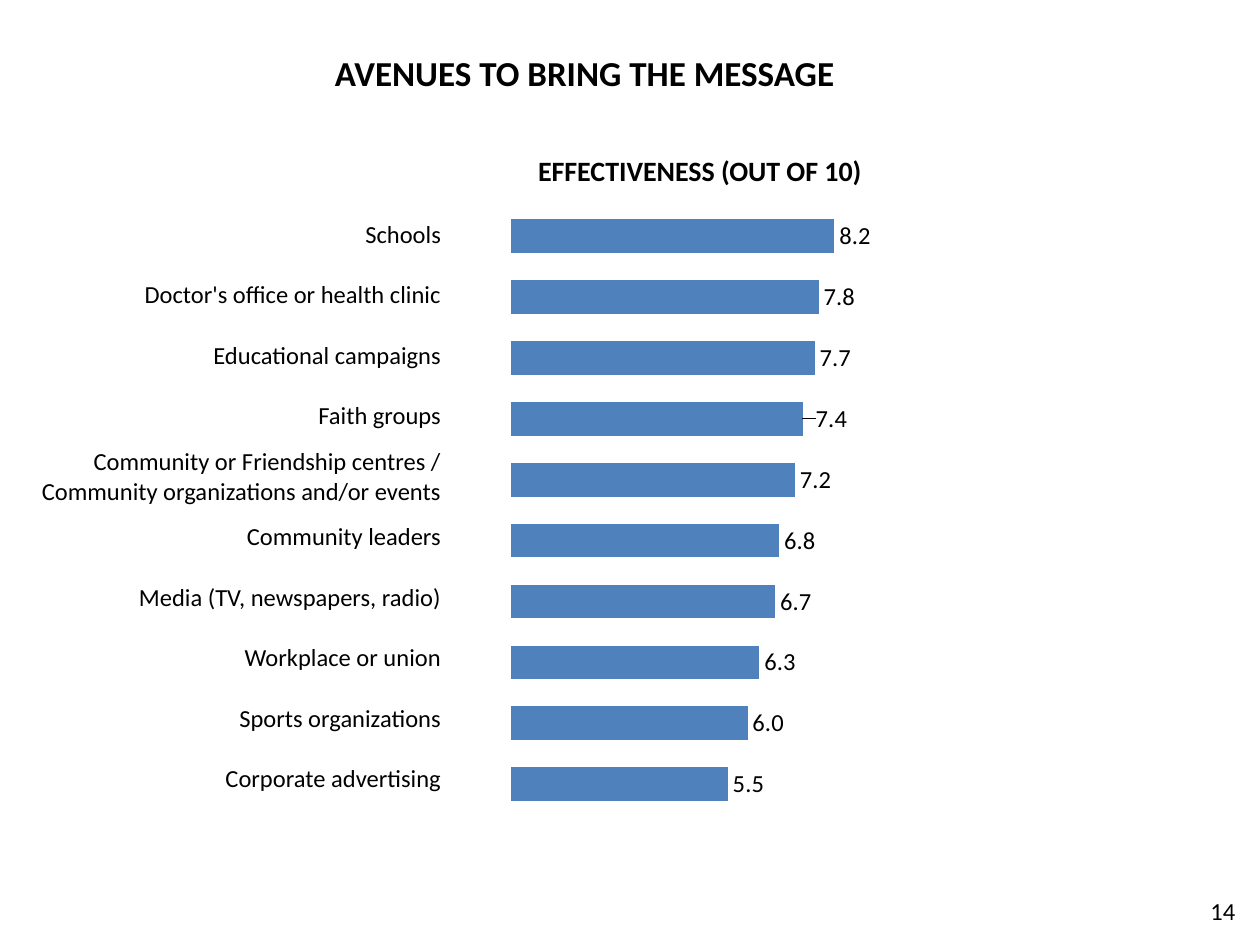
from lxml.etree import SubElement
from pptx import Presentation
from pptx.chart.data import CategoryChartData
from pptx.dml.color import RGBColor
from pptx.enum.chart import XL_CHART_TYPE, XL_LABEL_POSITION
from pptx.enum.text import MSO_ANCHOR, PP_ALIGN
from pptx.oxml.ns import qn
from pptx.util import Inches, Pt

BLACK = RGBColor(0x00, 0x00, 0x00)
BLUE = RGBColor(0x4F, 0x81, 0xBD)
FONT = "Calibri"
ROW_HEIGHT = 0.48
AVENUES = [
    ("Schools", 8.2),
    ("Doctor's office or health clinic", 7.8),
    ("Educational campaigns", 7.7),
    ("Faith groups", 7.4),
    ("Community or Friendship centres / Community organizations and/or events", 7.2),
    ("Community leaders", 6.8),
    ("Media (TV, newspapers, radio)", 6.7),
    ("Workplace or union", 6.3),
    ("Sports organizations", 6.0),
    ("Corporate advertising", 5.5),
]


def format_font(font, size, bold=False):
    """Apply the slide's typeface and colour to a font."""
    for name, value in {"name": FONT, "size": Pt(size), "bold": bold}.items():
        setattr(font, name, value)
    font.color.rgb = BLACK


def add_text(slide, text, box, size, bold=False, align=PP_ALIGN.LEFT):
    """Add a one-paragraph text box."""
    shape = slide.shapes.add_textbox(*map(Inches, box))
    shape.text_frame.word_wrap = True
    paragraph = shape.text_frame.paragraphs[0]
    paragraph.text = text
    paragraph.alignment = align
    format_font(paragraph.runs[0].font, size, bold)


def set_layout(parent, position, values):
    """Place a manual layout at the given child position of a chart element."""
    for old in parent.findall(qn("c:layout")):
        parent.remove(old)
    layout = SubElement(parent, qn("c:layout"))
    manual = SubElement(layout, qn("c:manualLayout"))
    for tag, value in values.items():
        SubElement(manual, qn(f"c:{tag}")).set("val", str(value))
    parent.insert(position, layout)


def format_labels(plot):
    """Show values beside the bars and nudge the faith groups label."""
    plot.has_data_labels = True
    labels = plot.data_labels
    settings = {
        "show_value": True,
        "number_format": "#,##0.0",
        "number_format_is_linked": False,
        "position": XL_LABEL_POSITION.OUTSIDE_END,
    }
    for name, value in settings.items():
        setattr(labels, name, value)
    format_font(labels.font, 14)
    series = plot.series[0]
    faith_index = [value for _, value in reversed(AVENUES)].index(7.4)
    label = series.points[faith_index].data_label
    label.position = XL_LABEL_POSITION.OUTSIDE_END
    format_font(label.font, 14)
    series_labels = series.data_labels
    for name, value in settings.items():
        setattr(series_labels, name, value)
    format_font(series_labels.font, 14)
    point_label = series_labels._element.find(qn("c:dLbl"))
    set_layout(point_label, 1, {"x": 0.015, "y": 0})


def add_bar_chart(slide, box):
    """Add the effectiveness bars, lowest value at the bottom."""
    data = CategoryChartData(number_format="0.0")
    data.categories = [str(number + 1) for number in range(len(AVENUES))]
    data.add_series("Series 1", [value for _, value in reversed(AVENUES)])
    frame = slide.shapes.add_chart(
        XL_CHART_TYPE.BAR_CLUSTERED, *map(Inches, box), data
    )
    chart = frame.chart
    chart.has_legend = False
    chart.has_title = False
    format_font(chart.font, 18)
    chart.value_axis.minimum_scale = 0
    chart.value_axis.maximum_scale = 12
    chart.value_axis.has_major_gridlines = False
    for axis in (chart.category_axis, chart.value_axis):
        axis.visible = False
    plot = chart.plots[0]
    plot.gap_width = 81
    plot.vary_by_categories = False
    fill = plot.series[0].format.fill
    fill.solid()
    fill.fore_color.rgb = BLUE
    format_labels(plot)
    plot_area = chart._chartSpace.chart.plotArea
    set_layout(plot_area, 0, {
        "layoutTarget": "inner", "xMode": "edge", "yMode": "edge",
        "x": 0.055, "y": 0.017, "w": 0.889, "h": 0.877,
    })


def add_avenue_table(slide, left, top, width):
    """Add the right-aligned column of avenue names."""
    count = len(AVENUES)
    frame = slide.shapes.add_table(
        count, 1, Inches(left), Inches(top), Inches(width), Inches(count * ROW_HEIGHT)
    )
    table = frame.table
    table.first_row = table.horz_banding = False
    cell_format = {
        "margin_left": Inches(0.01),
        "margin_top": Inches(0.01),
        "margin_right": Inches(0.01),
        "margin_bottom": 0,
        "vertical_anchor": MSO_ANCHOR.MIDDLE,
    }
    for cell, (avenue, _) in zip(table.iter_cells(), AVENUES):
        for name, value in cell_format.items():
            setattr(cell, name, value)
        cell.fill.background()
        paragraph = cell.text_frame.paragraphs[0]
        paragraph.text = avenue
        paragraph.alignment = PP_ALIGN.RIGHT
        format_font(paragraph.runs[0].font, 14)


def main():
    """Build and save the slide."""
    presentation = Presentation()
    presentation.slide_width = Inches(10)
    presentation.slide_height = Inches(7.5)
    slide = presentation.slides.add_slide(presentation.slide_layouts[6])
    add_text(slide, "14", (9.41, 7.06, 0.59, 0.44), 14, align=PP_ALIGN.CENTER)
    add_bar_chart(slide, (3.82, 1.54, 4.23, 5.51))
    add_avenue_table(slide, 0.28, 1.62, 3.23)
    add_text(slide, "EFFECTIVENESS (OUT OF 10)", (4.06, 1.17, 2.99, 0.37), 16,
             bold=True, align=PP_ALIGN.CENTER)
    add_text(slide, "AVENUES TO BRING THE MESSAGE", (2.56, 0.36, 5.51, 0.44), 20,
             bold=True)
    presentation.save("out.pptx")


if __name__ == "__main__":
    main()
